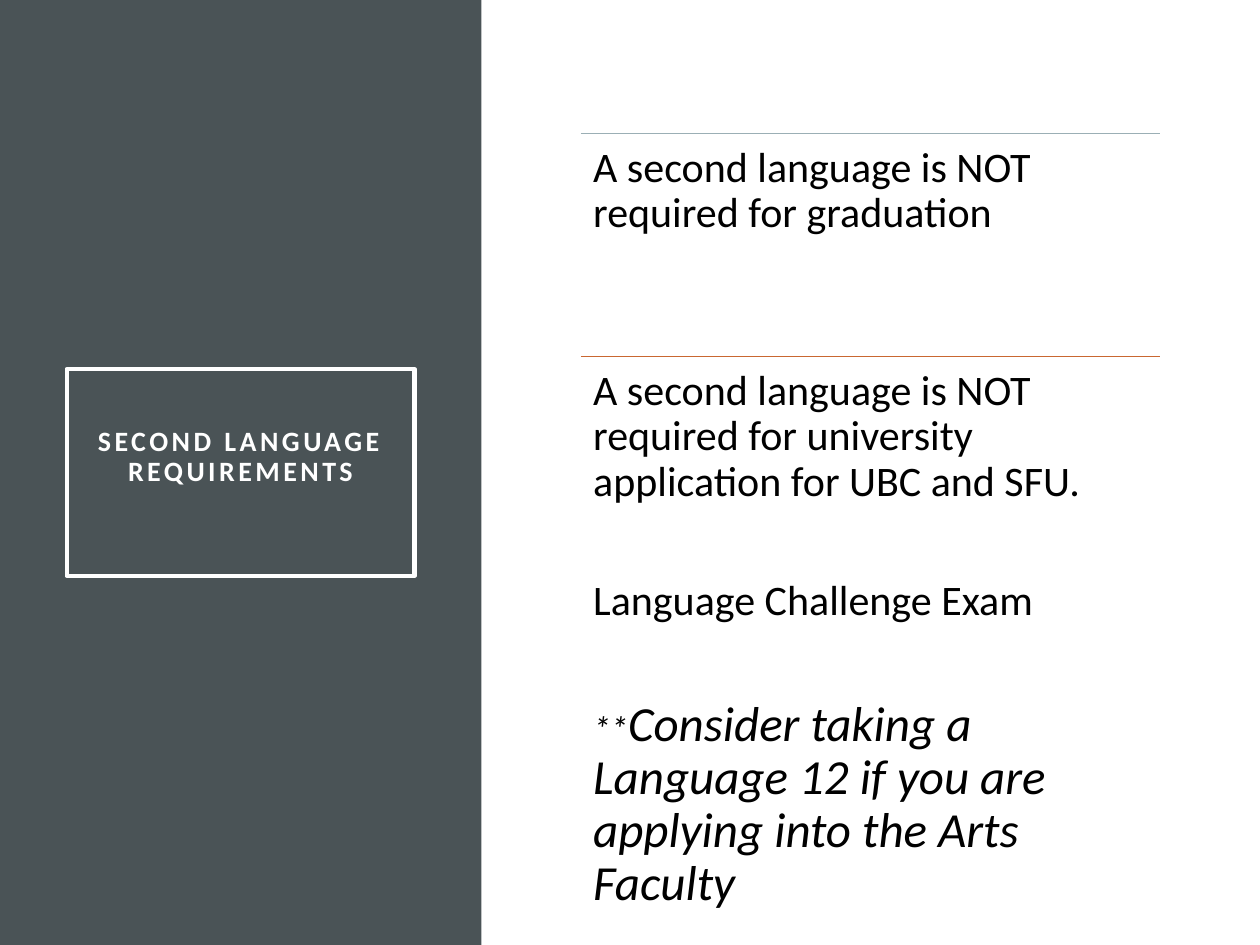
from pptx import Presentation
from pptx.dml.color import RGBColor
from pptx.enum.shapes import MSO_CONNECTOR, MSO_SHAPE
from pptx.enum.text import MSO_ANCHOR, PP_ALIGN
from pptx.oxml.ns import qn
from pptx.util import Inches, Pt
from lxml import etree

RECTANGLE = MSO_SHAPE.RECTANGLE
STRAIGHT = MSO_CONNECTOR.STRAIGHT
TOP, MIDDLE = MSO_ANCHOR.TOP, MSO_ANCHOR.MIDDLE
LEFT, CENTER = PP_ALIGN.LEFT, PP_ALIGN.CENTER

FONT = "Calibri"
SLATE, WHITE, BLACK = "4A5356", "FFFFFF", "000000"
SECTION_LEFT, SECTION_WIDTH = 4.61, 4.6
PARAGRAPH_GAP = 42.5

BODY = {"size": Pt(24)}
NOTE_MARK = {"size": Pt(20), "italic": True}
NOTE = {"size": Pt(28), "italic": True}

# Top, height, rule colour, and paragraphs made of (text, format) runs
SECTIONS = [
    (1.06, 1.77, "9BAFB5", [
        [("A second language is NOT required for graduation", BODY)],
    ]),
    (2.83, 4.38, "C96731", [
        [("A second language is NOT required for university "
          "application for UBC and SFU.", BODY)],
        [("Language Challenge Exam", BODY)],
        [("**", NOTE_MARK),
         ("Consider taking a Language 12 if you are applying "
          "into the Arts Faculty", NOTE)],
    ]),
]


def color(hex_value):
    return RGBColor.from_string(hex_value)


def set_values(target, values):
    for name, value in values.items():
        setattr(target, name, value)


def add_panel(slide, left, top, width, height, fill=None, line=None):
    panel = slide.shapes.add_shape(
        RECTANGLE, Inches(left), Inches(top), Inches(width), Inches(height))
    panel.shadow.inherit = False
    if fill:
        panel.fill.solid()
        panel.fill.fore_color.rgb = color(fill)
    else:
        panel.fill.background()
    if line:
        panel.line.color.rgb = color(line)
        panel.line.width = Pt(2.5)
    else:
        panel.line.fill.background()
    return panel


def add_rule(slide, left, top, width, line):
    rule = slide.shapes.add_connector(
        STRAIGHT, Inches(left), Inches(top), Inches(left + width), Inches(top))
    rule.line.color.rgb = color(line)
    rule.line.width = Pt(0.5)
    etree.SubElement(rule.element.spPr, qn("a:effectLst"))


def set_frame(frame, inset, anchor, bottom=None):
    set_values(frame, {
        "word_wrap": True,
        "vertical_anchor": anchor,
        "margin_left": Inches(inset),
        "margin_right": Inches(inset),
        "margin_top": Inches(inset),
        "margin_bottom": Inches(bottom or inset),
    })


def add_run(paragraph, text, text_color, values):
    run = paragraph.add_run()
    run.text = text
    set_values(run.font, {"name": FONT, **values})
    run.font.color.rgb = color(text_color)
    return run


def add_title(slide, text):
    box = add_panel(slide, 0.53, 2.93, 2.76, 1.64, line=WHITE)
    # The deeper bottom inset lifts the title above the box centre
    set_frame(box.text_frame, 0.2, MIDDLE, bottom=0.44)
    paragraph = box.text_frame.paragraphs[0]
    set_values(paragraph, {"alignment": CENTER, "line_spacing": 0.9})
    run = add_run(paragraph, text, WHITE, {"size": Pt(16), "bold": True})
    run.font._element.set("spc", "200")


def add_section(slide, top, height, rule_color, paragraphs):
    add_rule(slide, SECTION_LEFT, top, SECTION_WIDTH, rule_color)
    box = slide.shapes.add_textbox(
        Inches(SECTION_LEFT), Inches(top), Inches(SECTION_WIDTH), Inches(height))
    frame = box.text_frame
    set_frame(frame, 0.1, TOP)
    for index, runs in enumerate(paragraphs):
        paragraph = frame.add_paragraph() if index else frame.paragraphs[0]
        set_values(paragraph, {
            "alignment": LEFT,
            "line_spacing": 0.9,
            "space_before": Pt(PARAGRAPH_GAP if index else 0),
        })
        for text, values in runs:
            add_run(paragraph, text, BLACK, values)


def main():
    presentation = Presentation()
    presentation.slide_width = Inches(10)
    presentation.slide_height = Inches(7.5)
    slide = presentation.slides.add_slide(presentation.slide_layouts[6])

    # Side panel with the title
    add_panel(slide, 0, 0, 3.82, 7.5, fill=SLATE)
    add_title(slide, "SECOND LANGUAGE REQUIREMENTS")

    # Ruled sections
    for section in SECTIONS:
        add_section(slide, *section)

    presentation.save("out.pptx")


if __name__ == "__main__":
    main()
